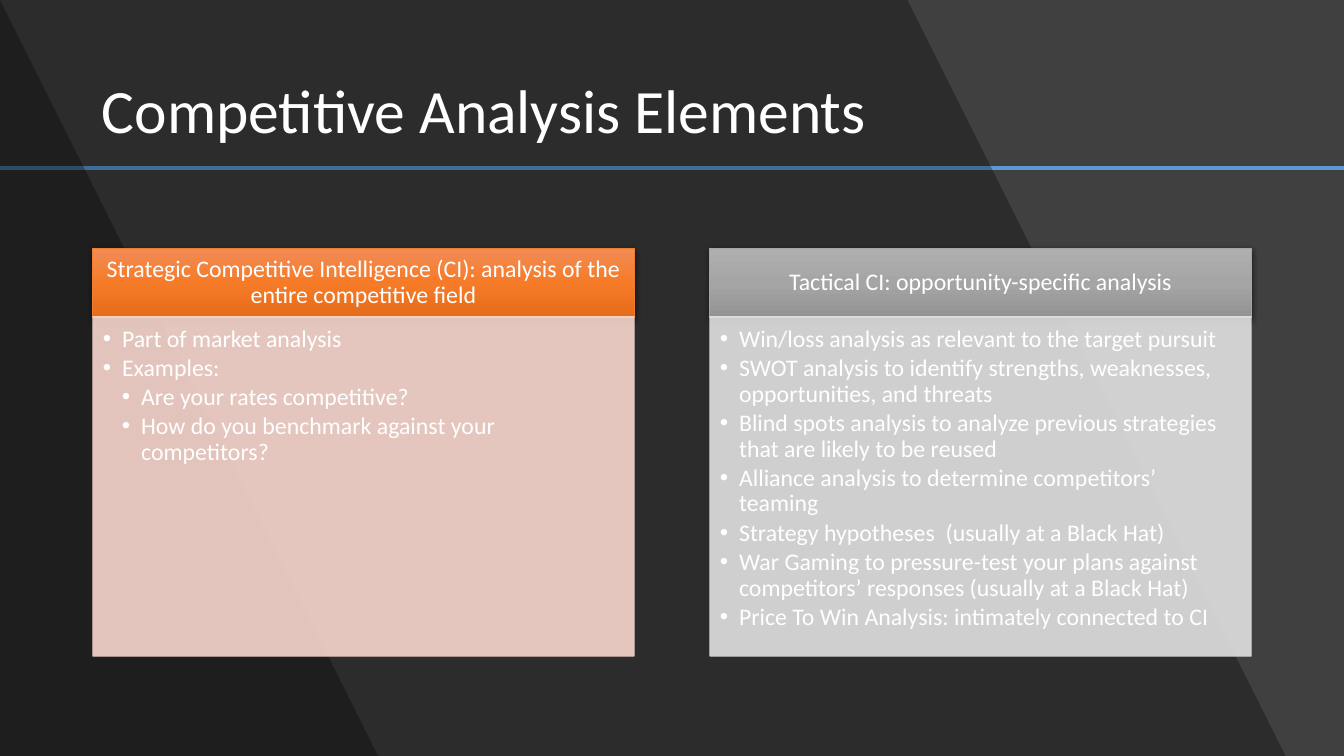
from copy import deepcopy
from lxml import etree
from pptx import Presentation
from pptx.dml.color import RGBColor
from pptx.enum import shapes, text
from pptx.oxml.ns import qn
from pptx.util import Inches, Pt

HEX = {
    "back": "404040", "shade": "000000", "rule": "5B9BD5", "white": "FFFFFF",
    "orange": "ED7D31", "peach": "F8D7CE", "gray": "A5A5A5", "silver": "E1E1E1",
}
RGB = {name: RGBColor.from_string(code) for name, code in HEX.items()}
FADES = {
    "orange": ["F18C57", "F67B28", "E56C19"],
    "gray": ["AFAFAF", "A5A5A5", "939393"],
}
PANELS = [
    (0.92, "orange", "peach",
     "Strategic Competitive Intelligence (CI): analysis of the entire competitive field",
     [(0, "Part of market analysis"),
      (0, "Examples:"),
      (1, "Are your rates competitive?"),
      (1, "How do you benchmark against your competitors?")]),
    (7.04, "gray", "silver",
     "Tactical CI: opportunity-specific analysis",
     [(0, "Win/loss analysis as relevant to the target pursuit"),
      (0, "SWOT analysis to identify strengths, weaknesses, opportunities, and threats"),
      (0, "Blind spots analysis to analyze previous strategies that are likely to be reused"),
      (0, "Alliance analysis to determine competitors’ teaming"),
      (0, "Strategy hypotheses  (usually at a Black Hat)"),
      (0, "War Gaming to pressure-test your plans against competitors’ responses "
          "(usually at a Black Hat)"),
      (0, "Price To Win Analysis: intimately connected to CI")]),
]


def fade(shape, alpha):
    for color in shape._element.spPr.iter(qn("a:srgbClr")):
        etree.SubElement(color, qn("a:alpha"), val=str(alpha * 1000))


def style(par, size, align):
    par.alignment = align
    par.line_spacing = 0.9
    par.space_before = Pt(0)
    par.font.name = "Calibri"
    par.font.size = Pt(size)
    par.font.color.rgb = RGB["white"]


deck = Presentation()
deck.slide_width, deck.slide_height = Inches(13.33), Inches(7.5)
slide = deck.slides.add_slide(deck.slide_layouts[3])
slide.background.fill.solid()
slide.background.fill.fore_color.rgb = RGB["back"]
tree = slide.shapes._spTree
title, *lists = slide.placeholders

rule = slide.shapes.add_connector(
    shapes.MSO_CONNECTOR.STRAIGHT, 0, Inches(1.67), Inches(13.33), Inches(1.67))
rule.line.color.rgb = RGB["rule"]
rule.line.width = Pt(3)
etree.SubElement(rule._element.spPr, qn("a:effectLst"))

for top, foot in [(9.42, 12.89), (0.44, 3.92)]:
    pen = slide.shapes.build_freeform(0, 0, scale=Inches(1))
    pen.add_line_segments([(top, 0), (foot, 7.5), (0, 7.5)], close=True)
    band = pen.convert_to_shape()
    band.shadow.inherit = False
    band.fill.solid()
    band.fill.fore_color.rgb = RGB["shade"]
    band.line.fill.background()
    fade(band, 30)

tree.append(title._element)
title.left, title.top = Inches(0.91), Inches(0.4)
title.width, title.height = Inches(11.51), Inches(1.45)
title.text = "Competitive Analysis Elements"
title.text_frame.auto_size = text.MSO_AUTO_SIZE.NONE
title.text_frame.vertical_anchor = text.MSO_ANCHOR.MIDDLE
style(title.text_frame.paragraphs[0], 44, text.PP_ALIGN.LEFT)

for body, (left, tone, pale, label, items) in zip(lists, PANELS):
    head = slide.shapes.add_shape(
        shapes.MSO_SHAPE.RECTANGLE, Inches(left), Inches(2.46), Inches(5.37), Inches(0.69))
    head.fill.gradient()
    head.fill.gradient_angle = 270
    stops = head._element.spPr.find(".//" + qn("a:gsLst"))
    stops.append(deepcopy(stops[0]))
    for stop, code, place in zip(head.fill.gradient_stops, FADES[tone], [0, 0.5, 1]):
        stop.color.rgb = RGBColor.from_string(code)
        stop.position = place
    head.line.color.rgb = RGB[tone]
    head.line.width = Pt(0.5)
    head.shadow.inherit = False
    glow = etree.SubElement(
        head._element.spPr.find(qn("a:effectLst")), qn("a:outerShdw"),
        blurRad=str(Pt(4.5)), dist=str(Pt(1.5)), dir="5400000", rotWithShape="0")
    ink = etree.SubElement(glow, qn("a:srgbClr"), val=HEX["shade"])
    etree.SubElement(ink, qn("a:alpha"), val="63000")
    frame = head.text_frame
    frame.text = label
    frame.word_wrap = True
    frame.vertical_anchor = text.MSO_ANCHOR.MIDDLE
    frame.margin_left = frame.margin_right = Inches(0.13)
    frame.margin_top = frame.margin_bottom = Inches(0.08)
    style(frame.paragraphs[0], 17, text.PP_ALIGN.CENTER)

    tree.append(body._element)
    body.left, body.top = Inches(left), Inches(3.14)
    body.width, body.height = Inches(5.37), Inches(3.37)
    body.fill.solid()
    body.fill.fore_color.rgb = RGB[pale]
    body.line.color.rgb = RGB[pale]
    body.line.width = Pt(0.5)
    fade(body, 90)
    frame = body.text_frame
    frame.text = "\n".join(line for level, line in items)
    frame.auto_size = text.MSO_AUTO_SIZE.NONE
    frame.vertical_anchor = text.MSO_ANCHOR.TOP
    frame.margin_left = frame.margin_top = Inches(0.1)
    frame.margin_right, frame.margin_bottom = Inches(0.13), Inches(0.15)
    for par, (level, line) in zip(frame.paragraphs, items):
        par.level = level
        props = par._p.get_or_add_pPr()
        props.set("marL", str(Inches(0.19 * (level + 1))))
        props.set("indent", str(Inches(-0.19)))
        etree.SubElement(props, qn("a:buChar"), char="•")
        style(par, 17, text.PP_ALIGN.LEFT)
        par.space_after = Pt(2.5)

deck.save("out.pptx")
